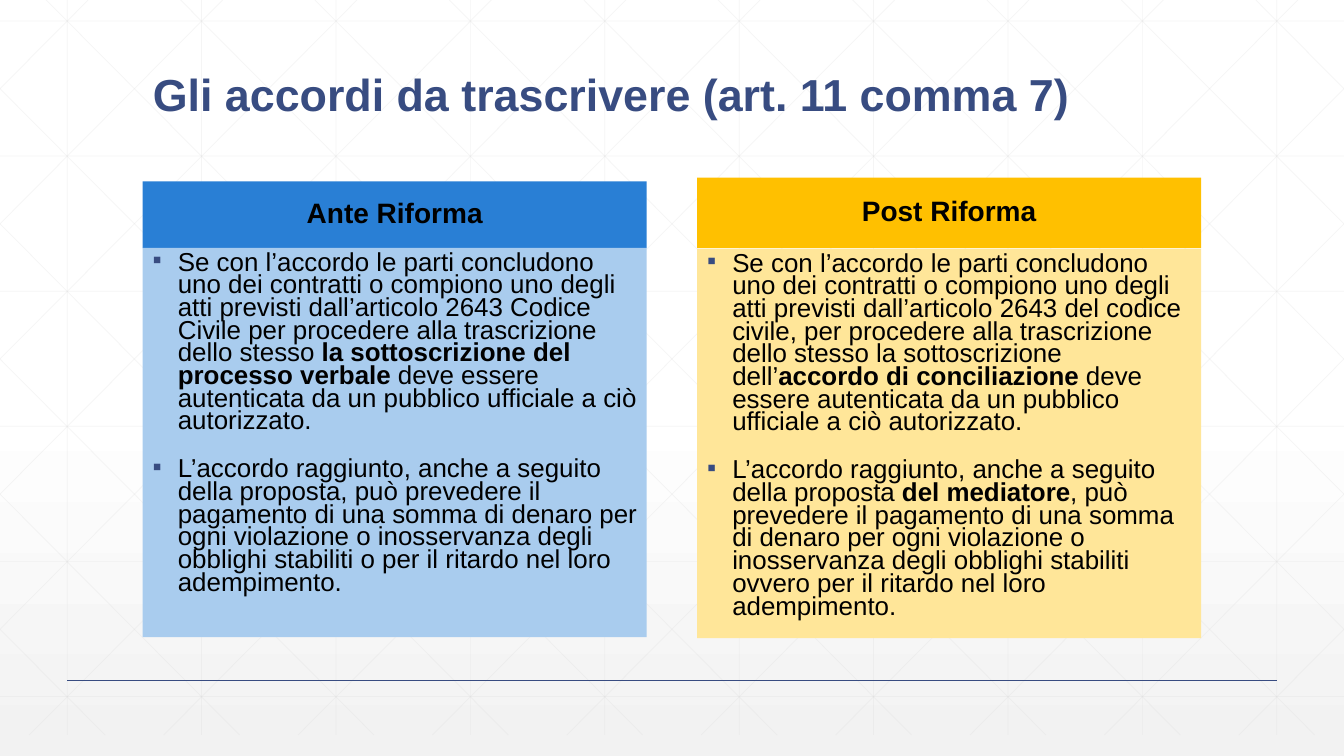
from copy import deepcopy

from lxml.etree import SubElement
from pptx import Presentation
from pptx.dml.color import RGBColor
from pptx.enum.shapes import MSO_CONNECTOR as Connector, MSO_SHAPE as Shape
from pptx.enum.text import MSO_ANCHOR as Anchor, MSO_AUTO_SIZE as AutoSize, PP_ALIGN as Align
from pptx.oxml.ns import qn
from pptx.util import Pt

WIDTH, HEIGHT = 960, 540
GRID_BOTTOM = 525
STEP = 96
NAVY = "384C81"

COLUMNS = [
    dict(left=102, top=129.6, heading="Ante Riforma", dark="297FD5", light="A9CCEE", body_top=177.1, points=[
        [("Se con l’accordo le parti concludono uno dei contratti o compiono uno degli atti previsti "
          "dall’articolo 2643 Codice Civile per procedere alla trascrizione dello stesso ", False),
         ("la sottoscrizione del processo verbale ", True),
         ("deve essere autenticata da un pubblico ufficiale a ciò autorizzato.", False)],
        [("L’accordo raggiunto, anche a seguito della proposta, può prevedere il pagamento di una somma "
          "di denaro per ogni violazione o inosservanza degli obblighi stabiliti o per il ritardo nel "
          "loro adempimento.", False)]]),
    dict(left=498, top=126.9, heading="Post Riforma", dark="FFC000", light="FFE699", body_top=177.8, points=[
        [("Se con l’accordo le parti concludono uno dei contratti o compiono uno degli atti previsti "
          "dall’articolo 2643 del codice civile, per procedere alla trascrizione dello stesso la "
          "sottoscrizione dell’", False),
         ("accordo di conciliazione ", True),
         ("deve essere autenticata da un pubblico ufficiale a ciò autorizzato.", False)],
        [("L’accordo raggiunto, anche a seguito della proposta ", False),
         ("del mediatore", True),
         (", può prevedere il pagamento di una somma di denaro per ogni violazione o inosservanza degli "
          "obblighi stabiliti ovvero per il ritardo nel loro adempimento.", False)]]),
]


def rgb(value):
    return RGBColor.from_string(value)


def write(paragraph, text, size=18.5, color="000000", bold=False, align=Align.LEFT, spacing=0.9):
    """Add one run of text to the paragraph and format both."""
    paragraph.alignment = align
    paragraph.line_spacing = spacing
    run = paragraph.add_run()
    run.text = text
    run.font.name = "Arial"
    run.font.size = Pt(size)
    run.font.bold = bold
    run.font.color.rgb = rgb(color)


def add_bullet(paragraph):
    properties = paragraph._p.get_or_add_pPr()
    properties.set("marL", str(Pt(18)))
    properties.set("indent", str(-Pt(18)))
    tint = SubElement(properties, qn("a:buClr"))
    SubElement(tint, qn("a:srgbClr"), val=NAVY)
    SubElement(properties, qn("a:buFont"), typeface="Arial")
    SubElement(properties, qn("a:buChar"), char="▪")


class SlideBuilder:
    def __init__(self, slide):
        self.slide = slide
        self.shapes = slide.shapes

    def background(self):
        fill = self.slide.background.fill
        fill.gradient()
        fill.gradient_angle = 270
        stop_list = self.slide.element.find(".//" + qn("a:gsLst"))
        stop_list.insert(1, deepcopy(stop_list[0]))
        stops = [(0, "FFFFFF"), (0.53, "FFFFFF"), (1, "F2F2F2")]
        for stop, (position, color) in zip(fill.gradient_stops, stops):
            stop.position = position
            stop.color.rgb = rgb(color)

    def line(self, x1, y1, x2, y2, color="D9D9D9", width=0.5, opacity=None):
        rule = self.shapes.add_connector(Connector.STRAIGHT, Pt(x1), Pt(y1), Pt(x2), Pt(y2))
        rule.line.color.rgb = rgb(color)
        rule.line.width = Pt(width)
        SubElement(rule.element.spPr, qn("a:effectLst"))
        if opacity is not None:
            tint = rule.element.spPr.find(".//" + qn("a:srgbClr"))
            SubElement(tint, qn("a:alpha"), val=str(opacity * 1000))

    def grid(self):
        for column in range(10):
            x = 48 + STEP * column
            self.line(x, 0, x, GRID_BOTTOM, opacity=25)
        for row in range(6):
            y = 15 + 96.5 * row
            self.line(0, y, WIDTH, y, opacity=25)
        for index in range(-5, 10):
            self.diagonal_pair(33 + STEP * index)

    def diagonal_pair(self, start):
        """Draw a falling line that meets the top edge at start, and its mirror, cut to the slide."""
        lean = 537 / 540
        x1 = max(start, 0)
        y1 = (x1 - start) / lean
        x2 = min(start + GRID_BOTTOM * lean, WIDTH)
        y2 = (x2 - start) / lean
        self.line(x1, y1, x2, y2, opacity=25)
        self.line(WIDTH - x1, y1, WIDTH - x2, y2, opacity=25)

    def title(self, text):
        title = self.shapes.title
        self.shapes.element.append(title.element)
        title.left, title.top, title.width, title.height = Pt(102), Pt(39.6), Pt(756), Pt(50.4)
        frame = title.text_frame
        frame.auto_size = AutoSize.NONE
        frame.word_wrap = True
        frame.vertical_anchor = Anchor.BOTTOM
        write(frame.paragraphs[0], text, size=32, color=NAVY, bold=True)

    def panel(self, left, top, height, color, anchor):
        """Add a filled rectangle and return its text frame."""
        panel = self.shapes.add_shape(Shape.RECTANGLE, Pt(left), Pt(top), Pt(360), Pt(height))
        panel.shadow.inherit = False
        panel.fill.solid()
        panel.fill.fore_color.rgb = rgb(color)
        panel.line.fill.background()
        panel.text_frame.word_wrap = True
        panel.text_frame.vertical_anchor = anchor
        return panel.text_frame

    def column(self, left, top, heading, dark, light, body_top, points):
        header = self.panel(left, top, 177.3 - top, dark, Anchor.MIDDLE)
        write(header.paragraphs[0], heading, size=20, bold=True, align=Align.CENTER)
        body = self.panel(left, body_top, 278, light, Anchor.TOP)
        for index, point in enumerate(points):
            paragraph = body.add_paragraph() if index else body.paragraphs[0]
            paragraph.space_before = Pt(18)
            for text, bold in point:
                write(paragraph, text, bold=bold, spacing=0.73)
            add_bullet(paragraph)


def main():
    deck = Presentation()
    deck.slide_width, deck.slide_height = Pt(WIDTH), Pt(HEIGHT)
    builder = SlideBuilder(deck.slides.add_slide(deck.slide_layouts[5]))
    builder.background()
    builder.grid()
    builder.line(48, 486, 912, 486, color=NAVY, width=1)
    builder.title("Gli accordi da trascrivere (art. 11 comma 7)")
    for column in COLUMNS:
        builder.column(**column)
    deck.save("out.pptx")


if __name__ == "__main__":
    main()
